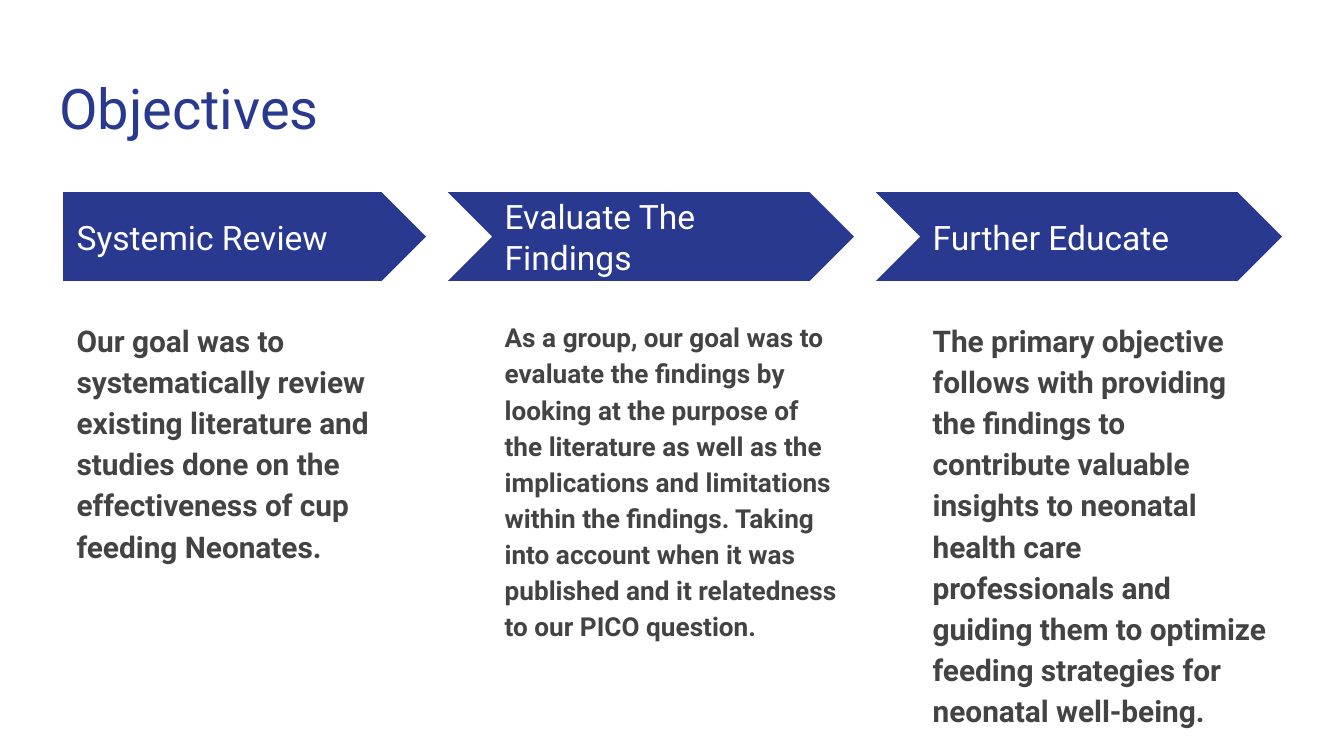
from copy import deepcopy

from lxml import etree
from pptx import Presentation
from pptx.dml.color import RGBColor
from pptx.enum.shapes import MSO_SHAPE
from pptx.enum.text import MSO_ANCHOR, MSO_AUTO_SIZE, PP_ALIGN
from pptx.oxml.ns import qn
from pptx.util import Pt

PENTAGON, CHEVRON = MSO_SHAPE.PENTAGON, MSO_SHAPE.CHEVRON
TOP, MIDDLE = MSO_ANCHOR.TOP, MSO_ANCHOR.MIDDLE
LEFT, NO_AUTOFIT = PP_ALIGN.LEFT, MSO_AUTO_SIZE.NONE

NAVY = RGBColor(0x2A, 0x39, 0x90)
WHITE = RGBColor(0xFF, 0xFF, 0xFF)
GREY = RGBColor(0x43, 0x43, 0x43)

FONT_NAME = "Roboto"
INSET = Pt(7.2)
COLUMN_LEFT, COLUMN_TOP = Pt(33.84), Pt(103)
COLUMN_WIDTH, COLUMN_PITCH = Pt(194.4), Pt(229.3)
CHEVRON_TAIL = Pt(23.2)
ARROW_HEIGHT = Pt(47.5)
HEADING_WIDTH, HEADING_HEIGHT = Pt(177.8), Pt(24.5)
BODY_OFFSET, BODY_HEIGHT = Pt(59.7), Pt(208.8)

TITLE_FORMAT = {"size": Pt(30), "bold": False}
HEADING_FORMAT = {"size": Pt(18), "bold": False}
PLAIN_SPACING = {"line_spacing": 1.0, "space_before": Pt(0), "space_after": Pt(0)}
BODY_SPACING = {"line_spacing": 1.15, "space_before": Pt(0), "space_after": Pt(8)}

COLUMNS = [
    (PENTAGON, "Systemic Review", 16,
     "Our goal was to systematically review existing literature and studies "
     "done on the effectiveness of cup feeding Neonates."),
    (CHEVRON, "Evaluate The Findings", 14,
     "As a group, our goal was to evaluate the findings by looking at the "
     "purpose of the literature as well as the implications and limitations "
     "within the findings. Taking into account when it was published and it "
     "relatedness to our PICO question."),
    (CHEVRON, "Further Educate", 16,
     "The primary objective follows with providing the findings to contribute "
     "valuable insights to neonatal health care professionals and guiding them "
     "to optimize feeding strategies for neonatal well-being."),
]


def set_attributes(target, values):
    for name, value in values.items():
        setattr(target, name, value)


def fill_placeholder(shape, box, text, color, font_format, spacing, anchor):
    set_attributes(shape, dict(zip(("left", "top", "width", "height"), box)))
    frame = shape.text_frame
    set_attributes(frame, {
        "margin_left": INSET, "margin_right": INSET,
        "margin_top": INSET, "margin_bottom": INSET,
        "word_wrap": True, "auto_size": NO_AUTOFIT, "vertical_anchor": anchor,
    })
    frame.text = text
    paragraph = frame.paragraphs[0]
    set_attributes(paragraph, {"alignment": LEFT, **spacing})
    properties = paragraph._p.get_or_add_pPr()
    properties.set("marL", "0")
    properties.set("indent", "0")
    etree.SubElement(properties, qn("a:buNone"))
    font = paragraph.runs[0].font
    set_attributes(font, {"name": FONT_NAME, **font_format})
    font.color.rgb = color


def add_body_placeholder(slide, pattern):
    element = deepcopy(pattern)
    next_id = max(shape.shape_id for shape in slide.shapes) + 1
    element.nvSpPr.cNvPr.set("id", str(next_id))
    element.nvSpPr.cNvPr.set("name", f"Text Placeholder {next_id}")
    slide.shapes._spTree.append(element)
    return slide.shapes[-1]


def add_arrow(slide, kind, box):
    arrow = slide.shapes.add_shape(kind, *box)
    arrow.adjustments[0] = 0.5
    arrow.shadow.inherit = False
    arrow.fill.solid()
    arrow.fill.fore_color.rgb = NAVY
    arrow.line.fill.background()


def add_objective(slide, pattern, box, kind, heading, body_size, body):
    left, top, width, height = box
    tail = CHEVRON_TAIL if kind == CHEVRON else 0
    add_arrow(slide, kind, (left - tail, top, width + tail, ARROW_HEIGHT))
    heading_top = top + (ARROW_HEIGHT - HEADING_HEIGHT) // 2
    fill_placeholder(
        add_body_placeholder(slide, pattern),
        (left, heading_top, HEADING_WIDTH, HEADING_HEIGHT),
        heading, WHITE, HEADING_FORMAT, PLAIN_SPACING, MIDDLE)
    fill_placeholder(
        add_body_placeholder(slide, pattern),
        (left, top + BODY_OFFSET, width, height - BODY_OFFSET),
        body, GREY, {"size": Pt(body_size), "bold": True}, BODY_SPACING, TOP)


def build_objectives_slide(presentation):
    slide = presentation.slides.add_slide(presentation.slide_layouts[1])
    fill_placeholder(
        slide.shapes.title, (Pt(24.5), Pt(32.4), Pt(671), Pt(47.5)),
        "Objectives", NAVY, TITLE_FORMAT, PLAIN_SPACING, TOP)
    pattern = slide.placeholders[1]._element
    slide.shapes._spTree.remove(pattern)
    for index, column in enumerate(COLUMNS):
        box = (COLUMN_LEFT + index * COLUMN_PITCH, COLUMN_TOP,
               COLUMN_WIDTH, BODY_OFFSET + BODY_HEIGHT)
        add_objective(slide, pattern, box, *column)


def main():
    presentation = Presentation()
    presentation.slide_width, presentation.slide_height = Pt(720), Pt(405)
    build_objectives_slide(presentation)
    presentation.save("out.pptx")


if __name__ == "__main__":
    main()
